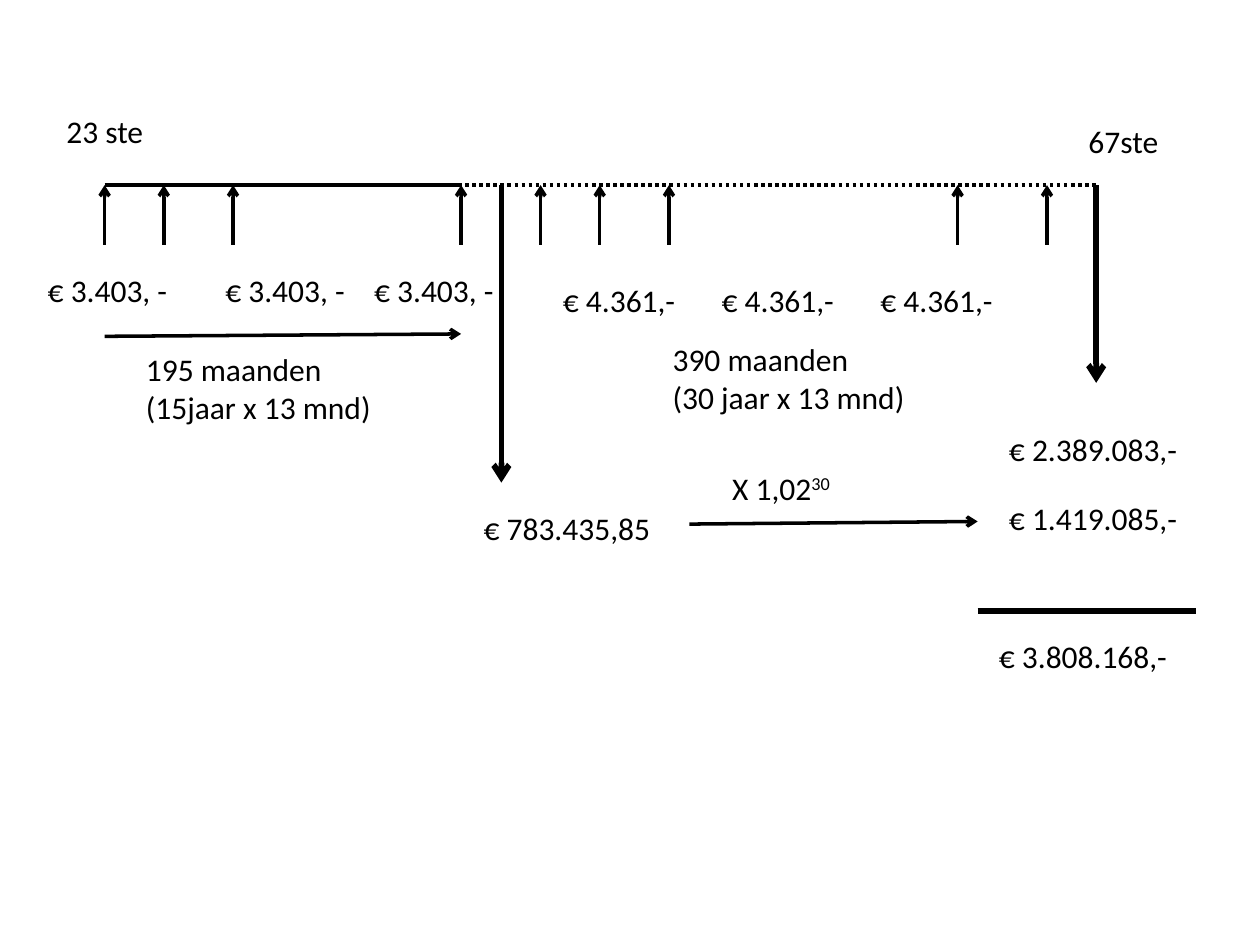
from lxml import etree
from pptx import Presentation
from pptx.dml.color import RGBColor
from pptx.enum.dml import MSO_LINE
from pptx.enum.shapes import MSO_CONNECTOR
from pptx.enum.text import MSO_AUTO_SIZE
from pptx.oxml.ns import qn
from pptx.util import Pt

STRAIGHT = MSO_CONNECTOR.STRAIGHT
DOTTED = MSO_LINE.ROUND_DOT
FIT_SHAPE = MSO_AUTO_SIZE.SHAPE_TO_FIT_TEXT

COLORS = {"ink": "000000", "background": "FFFFFF"}
INK = RGBColor.from_string(COLORS["ink"])
LABEL_FONT = {"name": "Calibri", "size": Pt(18)}
LABEL_HEIGHT = 29
DEPOSIT_HEIGHT = 34


def add_line(slide, start, end, width=2, arrow=False, dash=None):
    connector = slide.shapes.add_connector(STRAIGHT, *map(Pt, start + end))
    line_format = {"width": Pt(width), "dash_style": dash}
    for attribute, value in line_format.items():
        setattr(connector.line, attribute, value)
    connector.line.color.rgb = INK
    properties = connector._element.spPr
    if arrow:
        etree.SubElement(properties.find(qn("a:ln")), qn("a:tailEnd"), type="arrow")
    etree.SubElement(properties, qn("a:effectLst"))


def add_label(slide, box, text, exponent=None, wrap=True):
    label = slide.shapes.add_textbox(*map(Pt, box))
    frame = label.text_frame
    frame.word_wrap = wrap
    frame.auto_size = FIT_SHAPE
    frame.text = text
    if exponent:
        power = frame.paragraphs[0].add_run()
        power.text = exponent
        power._r.get_or_add_rPr().set("baseline", "30000")
    for paragraph in frame.paragraphs:
        for run in paragraph.runs:
            for attribute, value in LABEL_FONT.items():
                setattr(run.font, attribute, value)
            run.font.color.rgb = INK


def add_timeline(slide, box):
    left, top, width, height = box
    axis = top + height
    add_line(slide, (left, axis), (left + 203.7, axis), width=2.25)
    add_line(slide, (left + 198, axis), (left + width, axis), dash=DOTTED)
    add_label(slide, (left - 29, top, 79, LABEL_HEIGHT), "23 ste")
    add_label(slide, (left + width - 11.5, top + 6, 68, LABEL_HEIGHT), "67ste")


def add_deposits(slide, box, arrow_offsets, amount, amount_offsets, amount_size,
                 amount_drop, wrap, duration, duration_at):
    left, top = box
    for offset in arrow_offsets:
        x = left + offset
        add_line(slide, (x, top + DEPOSIT_HEIGHT), (x, top), arrow=True)
    for offset in amount_offsets:
        amount_box = (left + offset, top + amount_drop) + amount_size
        add_label(slide, amount_box, amount, wrap=wrap)
    duration_x, duration_y = duration_at
    add_label(slide, (left + duration_x, top + duration_y, 164, 73), duration)


def add_first_phase(slide, box):
    left, top, width, height = box
    add_deposits(slide, (left, top), (0, 33.8, 73.4, width), "€ 3.403, -",
                 (-39.6, 61.9, 146.9), (88, LABEL_HEIGHT), 45.4, False,
                 "195 maanden\n(15jaar x 13 mnd)", (16.5, 90.7))
    add_line(slide, (left, top + 86.4), (left + width, top + 85), arrow=True)
    payout_x = left + width + 23
    add_line(slide, (payout_x, top), (payout_x, top + height), width=3.25, arrow=True)


def add_second_phase(slide, box):
    left, top, width, height = box
    amount_width = 90.7
    amount_offsets = [5.7 + amount_width * i for i in range(3)]
    add_deposits(slide, (left, top), (0, 33.8, 73.4, 238.3, 289.4), "€ 4.361,-",
                 amount_offsets, (amount_width, LABEL_HEIGHT), 51.2, True,
                 "390 maanden\n(30 jaar x 13 mnd)", (68.4, 85))
    payout_x = left + width
    add_line(slide, (payout_x, top), (payout_x, top + height), width=3.25, arrow=True)


def add_growth(slide, box):
    left, top, width = box
    add_label(slide, (left, top + 23, 119, LABEL_HEIGHT), "€ 783.435,85")
    add_label(slide, (left + 142, top, 136, LABEL_HEIGHT), "X 1,02", exponent="30")
    add_line(slide, (left + 124.6, top + 35.3), (left + width, top + 33.8), arrow=True)


def add_totals(slide, box):
    left, top, width = box
    totals = (("€ 2.389.083,-", 10.8, 0), ("€ 1.419.085,-", 10.8, 39.6),
              ("€ 3.808.168,-", 5, 118.8))
    for amount, x, y in totals:
        add_label(slide, (left + x, top + y, 119, LABEL_HEIGHT), amount)
    sum_y = top + 107.3
    add_line(slide, (left, sum_y), (left + width, sum_y), width=3)


def main():
    presentation = Presentation()
    presentation.slide_width = Pt(720)
    presentation.slide_height = Pt(540)
    slide = presentation.slides.add_slide(presentation.slide_layouts[6])
    slide.background.fill.solid()
    slide.background.fill.fore_color.rgb = RGBColor.from_string(COLORS["background"])
    add_timeline(slide, (59.8, 60.4, 566.6, 45.4))
    add_first_phase(slide, (59.8, 105.8, 203.7, 170))
    add_second_phase(slide, (308.9, 105.8, 317.5, 113))
    add_growth(slide, (269.3, 264.2, 289.4))
    add_totals(slide, (558.7, 241.9, 124.6))
    presentation.save("out.pptx")


if __name__ == "__main__":
    main()
